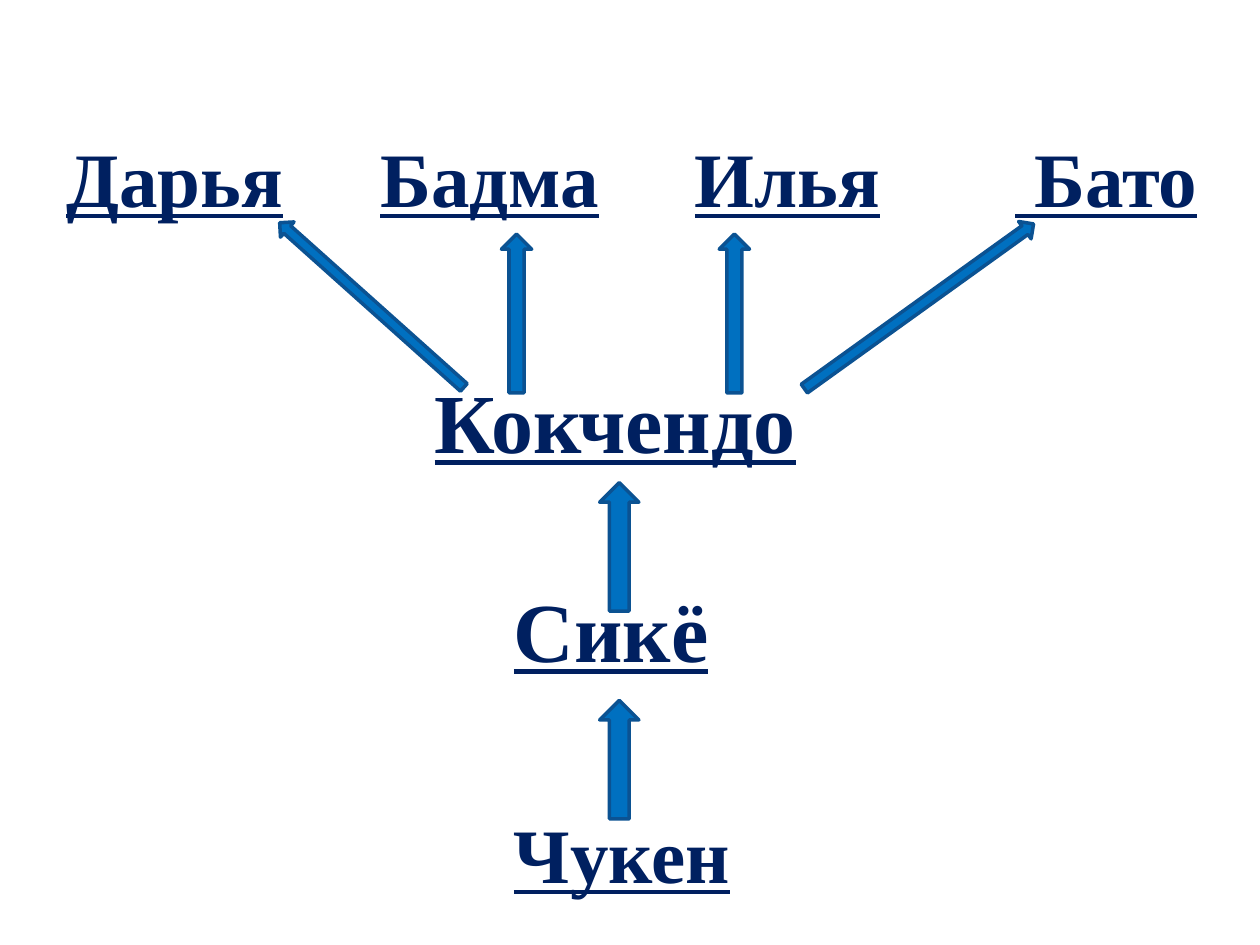
import pptx
import pptx.dml.color
import pptx.enum.shapes
import pptx.enum.text
import pptx.oxml
import pptx.util
from lxml import etree

Cm = pptx.util.Cm
Pt = pptx.util.Pt
HUES = {"text": "002060", "fill": "0070C0", "line": "0B5292"}


def tint(name):
    """Return the named colour."""
    return pptx.dml.color.RGBColor.from_string(HUES[name])


def label(slide, x, y, wide, high, words, size, stops=()):
    """Write underlined names in one line, set apart by tab stops."""
    box = slide.shapes.add_textbox(Cm(x), Cm(y), Cm(wide), Cm(high))
    frame = box.text_frame
    frame.word_wrap = True
    frame.auto_size = pptx.enum.text.MSO_AUTO_SIZE.SHAPE_TO_FIT_TEXT
    para = frame.paragraphs[0]
    for word in "|\t|".join(words).split("|"):
        run = para.add_run()
        run.text = word
        font = run.font
        font.name = "Times New Roman"
        font.size = Pt(size)
        font.bold = True
        font.underline = word != "\t"
        font.color.rgb = tint("text")
    if stops:
        tabs = etree.SubElement(para._p.get_or_add_pPr(), pptx.oxml.ns.qn("a:tabLst"))
        for stop in stops:
            etree.SubElement(tabs, pptx.oxml.ns.qn("a:tab"), pos=str(Cm(stop)), algn="l")


def arrow(slide, x, y, wide, high, turn=0):
    """Draw an upward block arrow, turned clockwise by some degrees."""
    kind = pptx.enum.shapes.MSO_SHAPE.UP_ARROW
    shape = slide.shapes.add_shape(kind, Cm(x), Cm(y), Cm(wide), Cm(high))
    shape.rotation = turn
    shape.shadow.inherit = False
    shape.fill.solid()
    shape.fill.fore_color.rgb = tint("fill")
    shape.line.color.rgb = tint("line")
    shape.line.width = Pt(2)


def trunk(slide, x, y):
    """Place the line of descent, from the bottom name up."""
    names = [
        ("Чукен", 1.6, 8.81, 5.99, 2.13, 44),
        ("Сикё", 1.6, 4.21, 5, 2.31, 48),
        ("Кокчендо", 0, 0, 8, 2.31, 48),
    ]
    for name, dx, dy, wide, high, size in names:
        label(slide, x + dx, y + dy, wide, high, [name], size)
    for dy, high in [(6.8, 2.39), (2.41, 2.59)]:
        arrow(slide, x + 3.58, y + dy, 0.79, high)


def crown(slide, x, y, wide, high):
    """Place the row of children and the arrows that lead to them."""
    names = ["Дарья", "Бадма", "Илья", " Бато"]
    label(slide, x, y, wide, high, names, 44, (6.33, 12.67, 19.13))
    arrow(slide, x + 6.2, y + 1.15, 0.41, 4.98, 311.8)
    for dx in (9.02, 13.41):
        arrow(slide, x + dx, y + 2.21, 0.61, 3.2)
    arrow(slide, x + 17.22, y + 0.82, 0.43, 5.69, 54.3)


def main():
    """Build the family tree slide and save it."""
    deck = pptx.Presentation()
    deck.slide_width = Cm(25.4)
    deck.slide_height = Cm(19.05)
    slide = deck.slides.add_slide(deck.slide_layouts[6])
    trunk(slide, 8.51, 7.32)
    crown(slide, 1.09, 2.51, 24.31, 2.13)
    deck.save("out.pptx")


if __name__ == "__main__":
    main()
